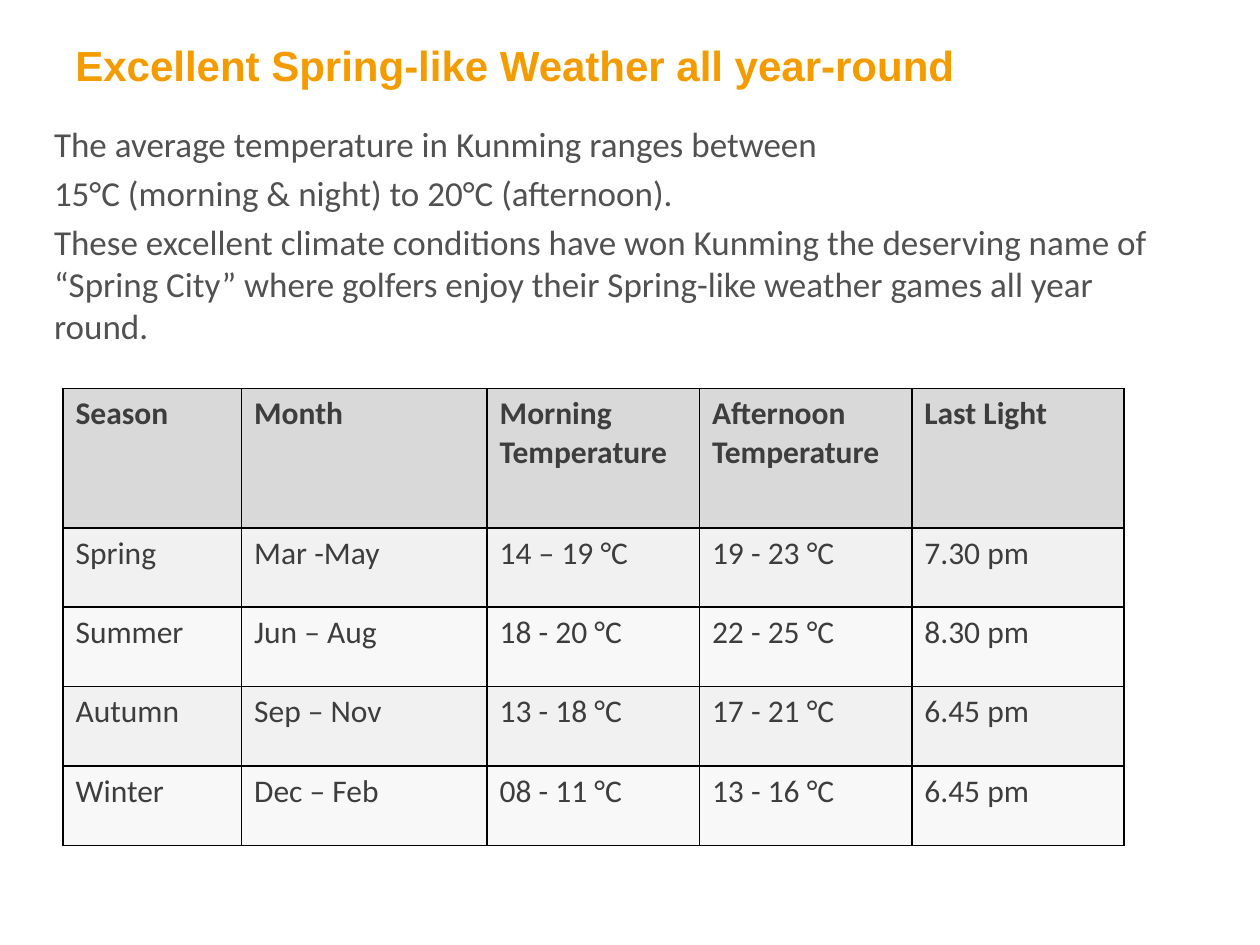
from lxml import etree
from pptx import Presentation
from pptx import util as u
from pptx.dml.color import RGBColor
from pptx.enum import text
from pptx.oxml import ns

ORANGE = RGBColor(0xF4, 0x9B, 0x00)
BODY_GREY = RGBColor(0x51, 0x51, 0x51)
TABLE_GREY = RGBColor(0x3D, 0x3D, 0x3D)
HEADER_FILL = RGBColor(0xD9, 0xD9, 0xD9)
BAND_FILLS = [RGBColor(0xF1, 0xF1, 0xF1), RGBColor(0xF8, 0xF8, 0xF8)]
BORDER = RGBColor(0x00, 0x00, 0x00)

TITLE = ["Excellent Spring-like Weather all year-round"]
INTRO = [
    "The average temperature in Kunming ranges between",
    "15°C (morning & night) to 20°C (afternoon).",
    "These excellent climate conditions have won Kunming the deserving name of "
    "“Spring City” where golfers enjoy their Spring-like weather games all year round.",
]
SEASONS = [
    ["Season", "Month", "Morning Temperature", "Afternoon\nTemperature", "Last Light"],
    ["Spring", "Mar -May", "14 – 19 °C", "19 - 23 °C", "7.30 pm"],
    ["Summer", "Jun – Aug", "18 - 20 °C", "22 - 25 °C", "8.30 pm"],
    ["Autumn", "Sep – Nov", "13 - 18 °C", "17 - 21 °C", "6.45 pm"],
    ["Winter", "Dec – Feb", "08 - 11 °C", "13 - 16 °C", "6.45 pm"],
]
COLUMN_WIDTHS = [3.6, 4.95, 4.28, 4.28, 4.28]
ROW_HEIGHTS = [2.81] + [1.6] * 4


def style(para, name, size, color, bold=False):
    font = para.font
    font.name, font.size, font.bold = name, u.Pt(size), bold
    font.color.rgb = color


def add_text(page, lines, left, top, width, height, **look):
    box = page.shapes.add_textbox(u.Cm(left), u.Cm(top), u.Cm(width), u.Cm(height))
    frame = box.text_frame
    frame.word_wrap = True
    frame.text = "\n".join(lines)
    for index, para in enumerate(frame.paragraphs):
        style(para, **look)
        if index:
            para.space_before = u.Pt(4)
    return frame


def add_borders(cell):
    properties = cell._tc.get_or_add_tcPr()
    for side in ("a:lnL", "a:lnR", "a:lnT", "a:lnB"):
        line = etree.SubElement(properties, ns.qn(side), w=str(u.Pt(1)))
        fill = etree.SubElement(line, ns.qn("a:solidFill"))
        etree.SubElement(fill, ns.qn("a:srgbClr"), val=str(BORDER))


def add_season_table(page):
    table = page.shapes.add_table(
        len(SEASONS), len(COLUMN_WIDTHS), u.Cm(1.27), u.Cm(7.83),
        u.Cm(sum(COLUMN_WIDTHS)), u.Cm(sum(ROW_HEIGHTS))).table
    table.horz_banding = False
    for column, width in zip(table.columns, COLUMN_WIDTHS):
        column.width = u.Cm(width)
    for index, (row, height, values) in enumerate(zip(table.rows, ROW_HEIGHTS, SEASONS)):
        row.height = u.Cm(height)
        header = index == 0
        for cell, value in zip(row.cells, values):
            cell.text = value
            add_borders(cell)
            cell.fill.solid()
            cell.fill.fore_color.rgb = HEADER_FILL if header else BAND_FILLS[(index - 1) % 2]
            for para in cell.text_frame.paragraphs:
                style(para, "Calibri", 18, TABLE_GREY, header)


def main():
    deck = Presentation()
    deck.slide_width, deck.slide_height = u.Cm(25.4), u.Cm(19.05)
    page = deck.slides.add_slide(deck.slide_layouts[6])

    title = add_text(page, TITLE, 1.27, 0.13, 22.86, 2.36,
                     name="Arial", size=24, color=ORANGE, bold=True)
    title.vertical_anchor = text.MSO_ANCHOR.MIDDLE

    intro = add_text(page, INTRO, 0.84, 2.34, 22.6, 15.44,
                     name="Calibri", size=20, color=BODY_GREY)
    for para in intro.paragraphs[:2]:
        para.alignment = text.PP_ALIGN.JUSTIFY

    add_season_table(page)
    deck.save("out.pptx")


if __name__ == "__main__":
    main()
